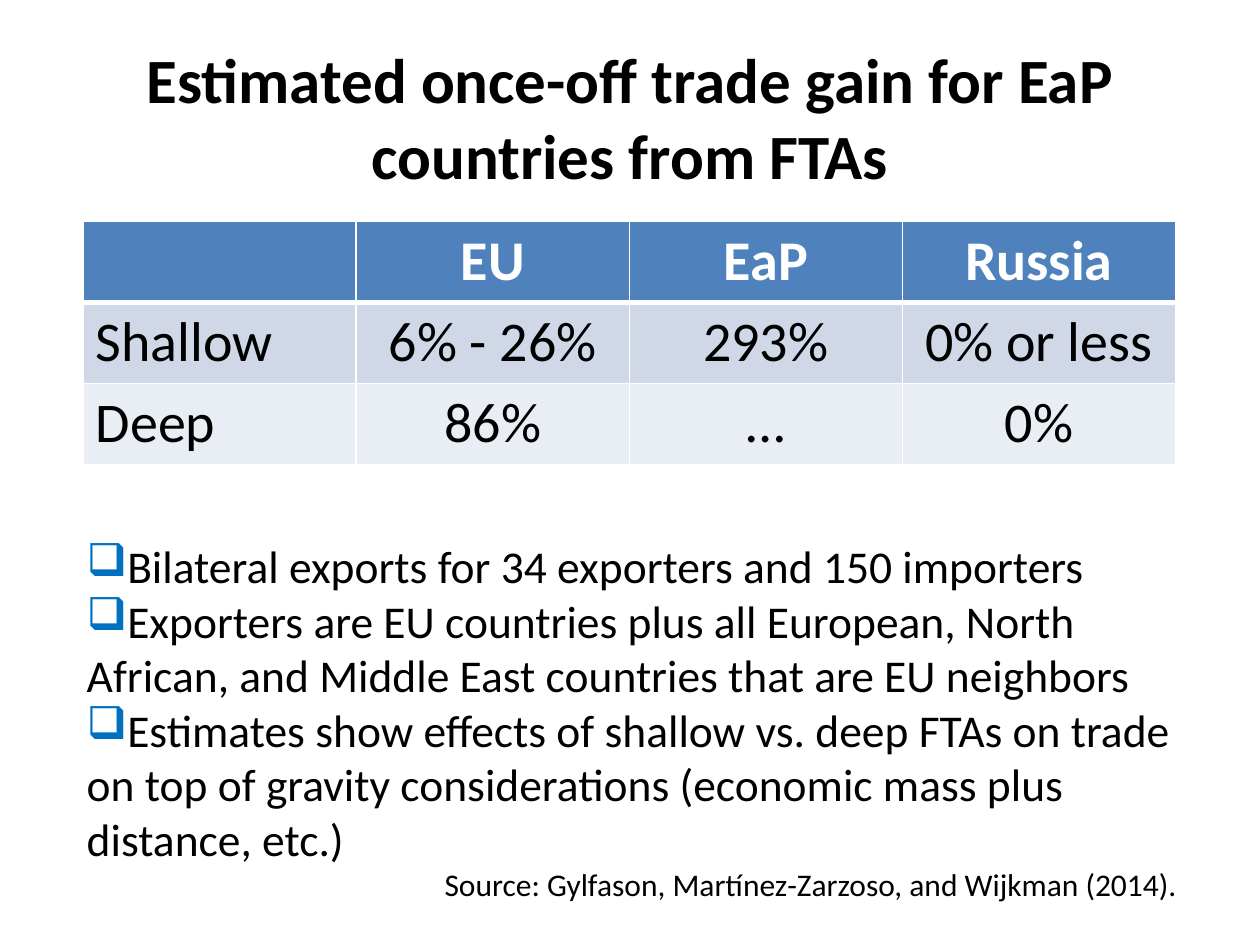
from typing import NamedTuple

from lxml import etree
from pptx import Presentation
from pptx.dml.color import RGBColor
from pptx.enum.text import MSO_ANCHOR, MSO_AUTO_SIZE, PP_ALIGN
from pptx.oxml.ns import qn
from pptx.util import Inches, Pt

LEFT, CENTER = PP_ALIGN.LEFT, PP_ALIGN.CENTER
MIDDLE = MSO_ANCHOR.MIDDLE
GROW = MSO_AUTO_SIZE.SHAPE_TO_FIT_TEXT
WIDTH, HEIGHT = Inches(10), Inches(7.5)
BLACK, WHITE, BULLET_BLUE = "000000", "FFFFFF", "0070C0"
ROW_FILLS = ("4F81BD", "D0D8E8", "E9EDF4")

TITLE = "Estimated once-off trade gain for EaP countries from FTAs"
GAINS = (
    ("", "EU", "EaP", "Russia"),
    ("Shallow", "6% - 26%", "293%", "0% or less"),
    ("Deep", "86%", "…", "0%"),
)
NOTES = (
    "Bilateral exports for 34 exporters and 150 importers",
    "Exporters are EU countries plus all European, North African, and "
    "Middle East countries that are EU neighbors",
    "Estimates show effects of shallow vs. deep FTAs on trade on top of "
    "gravity considerations (economic mass plus distance, etc.)",
)
SOURCE = "Source: Gylfason, Martínez-Zarzoso, and Wijkman (2014)."


class Area(NamedTuple):
    """A place on the slide, in shares of its width and height."""
    left: float
    top: float
    width: float
    height: float

    def lengths(self) -> tuple:
        return (int(self.left * WIDTH), int(self.top * HEIGHT),
                int(self.width * WIDTH), int(self.height * HEIGHT))


TITLE_AREA = Area(0.05, 0.04, 0.9, 1 / 6)
TABLE_AREA = Area(0.066, 0.234, 0.867, 0.256)
NOTES_AREA = Area(0.059, 0.563, 0.89, 0.364)
SOURCE_AREA = Area(0.343, 0.909, 0.608, 0.053)


def color(value: str) -> RGBColor:
    return RGBColor.from_string(value)


def write(para, text: str, size: float, fill: str = BLACK,
          bold: bool = False, align=LEFT) -> None:
    para.alignment = align
    span = para.add_run()
    span.text = text
    values = {"name": "Calibri", "size": Pt(size), "bold": bold}
    for name, value in values.items():
        setattr(span.font, name, value)
    span.font.color.rgb = color(fill)


def add_bullet(para) -> None:
    props = para._p.get_or_add_pPr()
    props.set("marL", "0")
    props.set("indent", "0")
    tint = etree.SubElement(props, qn("a:buClr"))
    etree.SubElement(tint, qn("a:srgbClr"), val=BULLET_BLUE)
    etree.SubElement(props, qn("a:buChar"), char="❑")


def add_borders(cell, bottom: float) -> None:
    """Draw white cell lines; they must come before the cell's fill."""
    props = cell._tc.get_or_add_tcPr()
    for side, points in {"L": 1, "R": 1, "T": 1, "B": bottom}.items():
        line = etree.SubElement(props, qn(f"a:ln{side}"), w=str(Pt(points)))
        paint = etree.SubElement(line, qn("a:solidFill"))
        etree.SubElement(paint, qn("a:srgbClr"), val=WHITE)


def add_gains(page) -> None:
    table = page.shapes.add_table(
        len(GAINS), len(GAINS[0]), *TABLE_AREA.lengths()).table
    for r, (values, fill) in enumerate(zip(GAINS, ROW_FILLS)):
        header = r == 0
        for c, value in enumerate(values):
            cell = table.cell(r, c)
            add_borders(cell, 3 if header else 1)
            cell.fill.solid()
            cell.fill.fore_color.rgb = color(fill)
            if value:
                write(cell.text_frame.paragraphs[0], value, 32,
                      WHITE if header else BLACK, header,
                      CENTER if c else LEFT)


def add_text(page, area: Area, lines: tuple, size: float,
             bullets: bool = False, wrap: bool = True) -> None:
    frame = page.shapes.add_textbox(*area.lengths()).text_frame
    frame.word_wrap = wrap
    frame.auto_size = GROW
    for index, line in enumerate(lines):
        para = frame.add_paragraph() if index else frame.paragraphs[0]
        if bullets:
            add_bullet(para)
        write(para, line, size)


def main() -> None:
    deck = Presentation()
    deck.slide_width, deck.slide_height = WIDTH, HEIGHT
    page = deck.slides.add_slide(deck.slide_layouts.get_by_name("Title Only"))

    # Title
    title = page.shapes.title
    title.left, title.top, title.width, title.height = TITLE_AREA.lengths()
    title.text_frame.vertical_anchor = MIDDLE
    write(title.text_frame.paragraphs[0], TITLE, 36, bold=True, align=CENTER)

    # Table, notes and source
    add_gains(page)
    add_text(page, NOTES_AREA, NOTES, 26, bullets=True)
    add_text(page, SOURCE_AREA, (SOURCE,), 18, wrap=False)

    deck.save("out.pptx")


if __name__ == "__main__":
    main()
